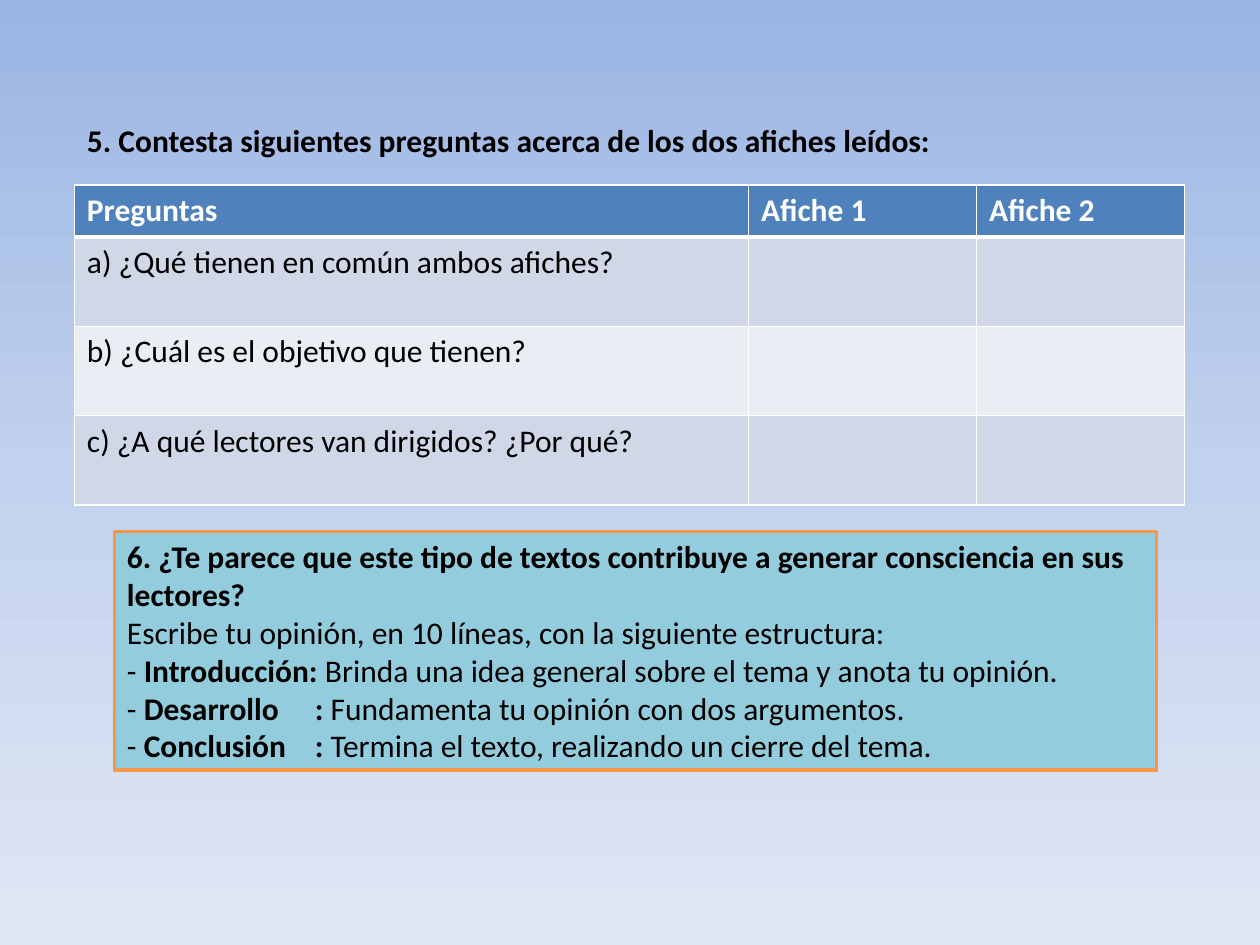
import copy

import pptx
import pptx.dml.color
import pptx.enum.shapes
import pptx.enum.text
import pptx.oxml
import pptx.oxml.ns
import pptx.util

Inches, Pt = pptx.util.Inches, pptx.util.Pt
RGB = pptx.dml.color.RGBColor
ANCHOR, ALIGN = pptx.enum.text.MSO_ANCHOR, pptx.enum.text.PP_ALIGN
qn = pptx.oxml.ns.qn

# Content
TITLE = "5. Contesta siguientes preguntas acerca de los dos afiches leídos:"
ROWS = [
    ("Preguntas", "Afiche 1", "Afiche 2"),
    ("a) ¿Qué tienen en común ambos afiches?", "", ""),
    ("b) ¿Cuál es el objetivo que tienen?", "", ""),
    ("c) ¿A qué lectores van dirigidos? ¿Por qué?", "", ""),
]
TASK = [  # paragraphs of (text, bold) runs
    [("6. ¿Te parece que este tipo de textos contribuye a generar "
      "consciencia en sus lectores?", True)],
    [("Escribe tu opinión, en 10 líneas, con la siguiente estructura:", False)],
    [("- ", False), ("Introducción: ", True),
     ("Brinda una idea general sobre el tema y anota tu opinión.", False)],
    [("- ", False), ("Desarrollo\t: ", True),
     ("Fundamenta tu opinión con dos argumentos.", False)],
    [("- ", False), ("Conclusión\t: ", True),
     ("Termina el texto, realizando un cierre del tema.", False)],
]
COLS = (5.35, 1.81, 1.65)
HEAD_H, ROW_H = 0.41, 0.71
COLON = 1.49  # tab stop that lines up the colons

# Colours
BLACK, WHITE = RGB(0, 0, 0), RGB(255, 255, 255)
BLUE = RGB(0x4F, 0x81, 0xBD)
BANDS = (RGB(0xE9, 0xED, 0xF4), RGB(0xD0, 0xD8, 0xE8))
AQUA, ORANGE = RGB(0x93, 0xCD, 0xDD), RGB(0xF7, 0x96, 0x46)
SKY = [(0, RGB(0x9A, 0xB5, 0xE4)), (0.5, RGB(0xC2, 0xD1, 0xED)),
       (1, RGB(0xE1, 0xE8, 0xF5))]


def style(run, bold, color=BLACK):
    font = run.font
    font.name, font.size, font.bold = "Calibri", Pt(18), bold
    font.color.rgb = color


def border(cell, side, width):
    xml = (f'<a:{side} {pptx.oxml.ns.nsdecls("a")} w="{Pt(width)}"><a:solidFill>'
           f'<a:srgbClr val="{WHITE}"/></a:solidFill></a:{side}>')
    return pptx.oxml.parse_xml(xml)


def paint(cell, fill, base):
    cell.fill.solid()
    cell.fill.fore_color.rgb = fill
    props = cell._tc.get_or_add_tcPr()
    widths = {"lnL": 1, "lnR": 1, "lnT": 1, "lnB": base}
    for i, (side, width) in enumerate(widths.items()):
        props.insert(i, border(cell, side, width))


deck = pptx.Presentation()
deck.slide_width, deck.slide_height = Inches(10), Inches(7.5)
slide = deck.slides.add_slide(deck.slide_layouts[5])

# Background
back = slide.background.fill
back.gradient()
back.gradient_angle = 270
stops = slide._element.find(".//" + qn("a:gsLst"))
stops.append(copy.deepcopy(stops[0]))
for stop, (place, color) in zip(back.gradient_stops, SKY):
    stop.position = place
    stop.color.rgb = color

# Title
title = slide.shapes.title
title.left, title.top = Inches(0.59), Inches(0.6)
title.width, title.height = Inches(6.91), Inches(0.71)
frame = title.text_frame
frame.text = TITLE
frame.word_wrap = True
frame.auto_size = pptx.enum.text.MSO_AUTO_SIZE.NONE
frame.vertical_anchor = ANCHOR.BOTTOM
frame.paragraphs[0].alignment = ALIGN.LEFT
style(frame.paragraphs[0].runs[0], True)

# Table of questions
table = slide.shapes.add_table(
    len(ROWS), len(COLS), Inches(0.59), Inches(1.47), Inches(sum(COLS)),
    Inches(HEAD_H + ROW_H * (len(ROWS) - 1))).table
for col, width in zip(table.columns, COLS):
    col.width = Inches(width)
for r, texts in enumerate(ROWS):
    head = r == 0
    table.rows[r].height = Inches(HEAD_H if head else ROW_H)
    for c, text in enumerate(texts):
        cell = table.cell(r, c)
        paint(cell, BLUE if head else BANDS[r % 2], 3 if head else 1)
        if head:
            continue_top = None
        cell.text = text
        for run in cell.text_frame.paragraphs[0].runs:
            style(run, head, WHITE if head else BLACK)
for c in range(len(COLS)):
    line = table.cell(1, c)._tc.tcPr.find(qn("a:lnT"))
    line.set("w", str(Pt(3)))

# Writing task
box = slide.shapes.add_shape(
    pptx.enum.shapes.MSO_SHAPE.RECTANGLE,
    Inches(0.91), Inches(4.22), Inches(8.27), Inches(1.89))
box.shadow.inherit = False
box.fill.solid()
box.fill.fore_color.rgb = AQUA
box.line.color.rgb = ORANGE
box.line.width = Pt(2)
frame = box.text_frame
frame.word_wrap = True
frame.vertical_anchor = ANCHOR.MIDDLE
for i, parts in enumerate(TASK):
    para = frame.add_paragraph() if i else frame.paragraphs[0]
    para.alignment = ALIGN.LEFT
    tabs = pptx.oxml.parse_xml(
        f'<a:tabLst {pptx.oxml.ns.nsdecls("a")}>'
        f'<a:tab pos="{Inches(COLON)}" algn="l"/></a:tabLst>')
    para._p.get_or_add_pPr().append(tabs)
    for text, bold in parts:
        run = para.add_run()
        run.text = text
        style(run, bold)

deck.save("out.pptx")
